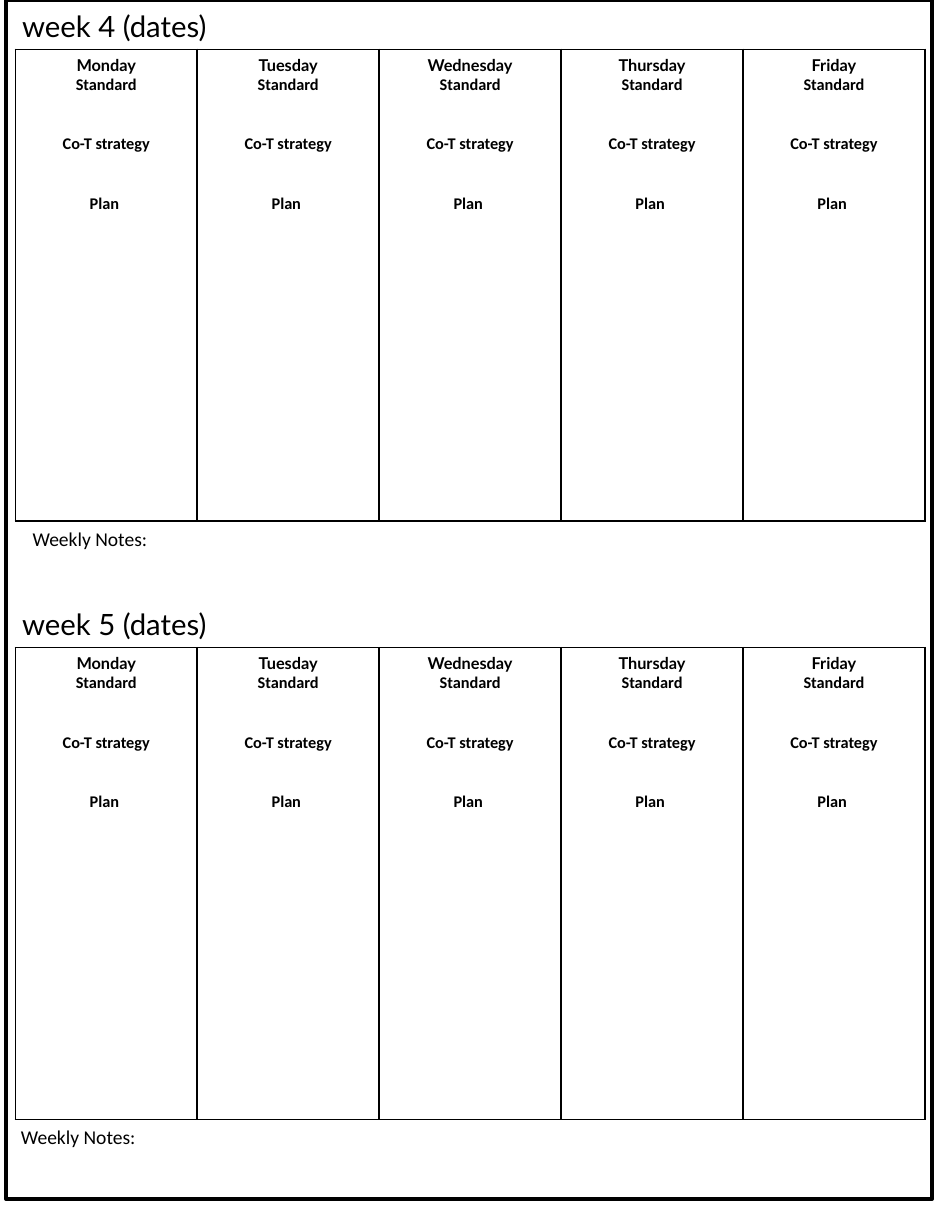
import pptx
import pptx.util
import pptx.dml.color
import pptx.enum.shapes
import pptx.enum.text
import pptx.oxml
import pptx.oxml.ns
from lxml import etree

Inches, Pt = pptx.util.Inches, pptx.util.Pt
COLORS = {"ink": "000000", "paper": "FFFFFF"}
DAYS = ["Monday", "Tuesday", "Wednesday", "Thursday", "Friday"]
SECTIONS = ["Standard", "Co-T strategy", "Plan "]
SECTION_GAP = Pt(24.4)  # two 10 pt lines left free for writing
COL_W, ROW_H = 1.55, 4.02


def rgb(name):
    return pptx.dml.color.RGBColor.from_string(COLORS[name])


def format_runs(p, font, size, bold=False):
    for r in p.runs:
        r.font.name = font
        r.font.size = Pt(size)
        r.font.bold = bold
        r.font.color.rgb = rgb("ink")


def add_frame(s):
    sp = s.shapes.add_shape(pptx.enum.shapes.MSO_SHAPE.RECTANGLE,
                            Inches(0.05), 0, Inches(7.89), Inches(10.22))
    sp.shadow.inherit = False
    sp.fill.solid()
    sp.fill.fore_color.rgb = rgb("paper")
    sp.line.color.rgb = rgb("ink")
    sp.line.width = Pt(2.25)


def add_label(s, text, x, y, w, h, font, size):
    tf = s.shapes.add_textbox(Inches(x), Inches(y), Inches(w), Inches(h)).text_frame
    tf.word_wrap = True
    tf.text = text
    format_runs(tf.paragraphs[0], font, size)


def set_borders(cell):
    tc_pr = cell._tc.get_or_add_tcPr()
    qn = pptx.oxml.ns.qn
    for i, side in enumerate(["lnL", "lnR", "lnT", "lnB"]):
        ln = etree.Element(qn(f"a:{side}"), w=str(Pt(1)))
        fill = etree.SubElement(ln, qn("a:solidFill"))
        etree.SubElement(fill, qn("a:srgbClr"), val=COLORS["ink"])
        tc_pr.insert(i, ln)


def fill_day(cell, day):
    cell.fill.background()
    set_borders(cell)
    tf = cell.text_frame
    tf.text = "\n".join([day] + SECTIONS)
    for i, p in enumerate(tf.paragraphs):
        p.alignment = pptx.enum.text.PP_ALIGN.CENTER
        format_runs(p, "Calibri" if i else "Lato", 10, bold=True)
        if i > 1:
            p.space_before = SECTION_GAP


def add_week_table(s, y):
    table = s.shapes.add_table(1, len(DAYS), Inches(0.13), Inches(y),
                               Inches(COL_W * len(DAYS)), Inches(ROW_H)).table
    table.first_row = False
    table.horz_banding = False
    table.rows[0].height = Inches(ROW_H)
    for i, day in enumerate(DAYS):
        table.columns[i].width = Inches(COL_W)
        fill_day(table.cell(0, i), day)


def add_week(s, number, y, title_w, notes_x):
    add_week_table(s, y)
    add_label(s, f"week {number} (dates)", 0.09, y - 0.4, title_w, 0.81, "Lato", 18)
    add_label(s, "Weekly Notes:", notes_x, y + ROW_H, 1.36, 0.3, "Calibri", 12)


def main():
    prs = pptx.Presentation()
    prs.slide_width, prs.slide_height = Inches(8), Inches(10.5)
    s = prs.slides.add_slide(prs.slide_layouts[6])

    # Page border
    add_frame(s)

    # Weekly planners
    add_week(s, 4, 0.42, 6.94, 0.18)
    add_week(s, 5, 5.52, 7.73, 0.08)

    prs.save("out.pptx")


if __name__ == "__main__":
    main()
